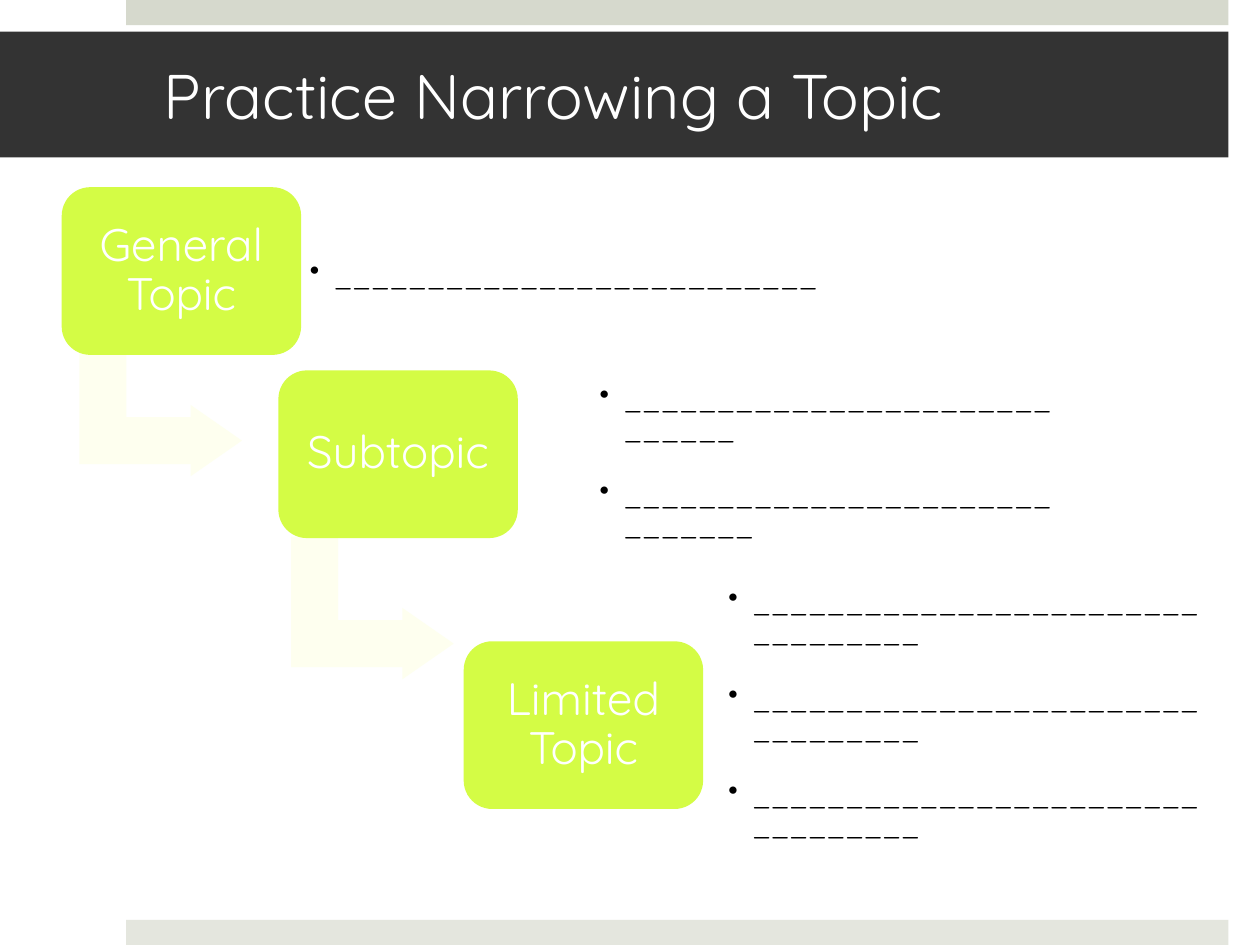
from dataclasses import dataclass

from lxml import etree
from pptx import Presentation
from pptx.dml.color import RGBColor
from pptx.enum import shapes as sh, text as tx
from pptx.oxml.ns import qn
from pptx.util import Pt


@dataclass(frozen=True)
class Theme:
    font: str = "Quicksand"
    dark: str = "333333"
    light: str = "FFFFFF"
    ink: str = "000000"
    box: str = "D4FC45"
    arrow: str = "FEFFEF"
    top: str = "D6D9CD"
    base: str = "E4E6DE"
    head: float = 36
    label: float = 26
    body: float = 16


@dataclass(frozen=True)
class Area:
    left: float
    top: float
    width: float
    height: float

    def size(self) -> tuple:
        return Pt(self.left), Pt(self.top), Pt(self.width), Pt(self.height)


@dataclass(frozen=True)
class Step:
    label: str
    left: float
    top: float
    notes: Area
    blanks: tuple  # underscores in each blank line to fill in


THEME = Theme()
BOX = (136.8, 95.8)
ARROW = (81.4, 92.9)
INDENT = 13.7
GAP = 20.6

STEPS = (
    Step("General Topic", 35.3, 107, Area(170.6, 118.8, 338.4, 77.8), (26,)),
    Step("Subtopic", 159.1, 211.7, Area(336.2, 225.4, 280.8, 77.8), (29, 30)),
    Step("Limited Topic", 265, 366.5, Area(409.7, 325.4, 291.6, 165.6),
         (33, 33, 33)),
)
ARROWS = (Area(51.1, 185, *ARROW), Area(172.1, 301, *ARROW))


def paint(shape, color: str) -> None:
    shape.fill.solid()
    shape.fill.fore_color.rgb = RGBColor.from_string(color)
    shape.line.fill.background()


def draw(slide, kind, area: Area, color: str):
    shape = slide.shapes.add_shape(kind, *area.size())
    shape.shadow.inherit = False
    paint(shape, color)
    return shape


def frame(shape, left: float, top: float, right: float, low: float):
    """Set margins, wrapping and middle anchoring; return the text frame."""
    body = shape.text_frame
    body.word_wrap = True
    body.auto_size = tx.MSO_AUTO_SIZE.NONE
    body.vertical_anchor = tx.MSO_ANCHOR.MIDDLE
    body.margin_left, body.margin_right = Pt(left), Pt(right)
    body.margin_top, body.margin_bottom = Pt(top), Pt(low)
    return body


def write(para, words: str, size: float, color: str) -> None:
    run = para.add_run()
    run.text = words
    run.font.name = THEME.font
    run.font.size = Pt(size)
    run.font.color.rgb = RGBColor.from_string(color)


def bullet(para) -> None:
    props = para._p.get_or_add_pPr()
    props.set("marL", str(Pt(INDENT)))
    props.set("indent", str(-Pt(INDENT)))
    etree.SubElement(props, qn("a:buChar")).set("char", "•")


def add_title(slide, words: str) -> None:
    title = slide.shapes.title
    title.left, title.top, title.width, title.height = Area(
        0, 18, 702, 72).size()
    paint(title, THEME.dark)
    para = frame(title, 93.6, 3.6, 21.6, 3.6).paragraphs[0]
    para.alignment = tx.PP_ALIGN.LEFT
    write(para, words, THEME.head, THEME.light)


def add_arrow(slide, area: Area) -> None:
    arrow = draw(slide, sh.MSO_SHAPE.BENT_UP_ARROW, area, THEME.arrow)
    arrow.rotation = 90
    for i, value in enumerate((0.33, 0.25, 0.36)):
        arrow.adjustments[i] = value


def add_box(slide, step: Step) -> None:
    area = Area(step.left, step.top, *BOX)
    box = draw(slide, sh.MSO_SHAPE.ROUNDED_RECTANGLE, area, THEME.box)
    box.adjustments[0] = 0.17
    para = frame(box, 7.8, 7.8, 7.8, 7.8).paragraphs[0]
    para.alignment = tx.PP_ALIGN.CENTER
    para.line_spacing = 0.9
    write(para, step.label, THEME.label, THEME.light)


def add_notes(slide, step: Step) -> None:
    notes = slide.shapes.add_textbox(*step.notes.size())
    body = frame(notes, 6.5, 6.5, 6.5, 6.5)
    for i, count in enumerate(step.blanks):
        para = body.add_paragraph() if i else body.paragraphs[0]
        para.line_spacing = 0.9
        para.space_before = Pt(GAP if i else 0)
        bullet(para)
        write(para, "_" * count, THEME.body, THEME.ink)


def main() -> None:
    deck = Presentation()
    deck.slide_width, deck.slide_height = Pt(720), Pt(540)
    slide = deck.slides.add_slide(deck.slide_layouts[5])
    for top, color in ((0, THEME.top), (525.6, THEME.base)):
        draw(slide, sh.MSO_SHAPE.RECTANGLE, Area(72, top, 630, 14.4), color)
    add_title(slide, "Practice Narrowing a Topic")
    for area in ARROWS:
        add_arrow(slide, area)
    for step in STEPS:
        add_box(slide, step)
        add_notes(slide, step)
    deck.save("out.pptx")


if __name__ == "__main__":
    main()
